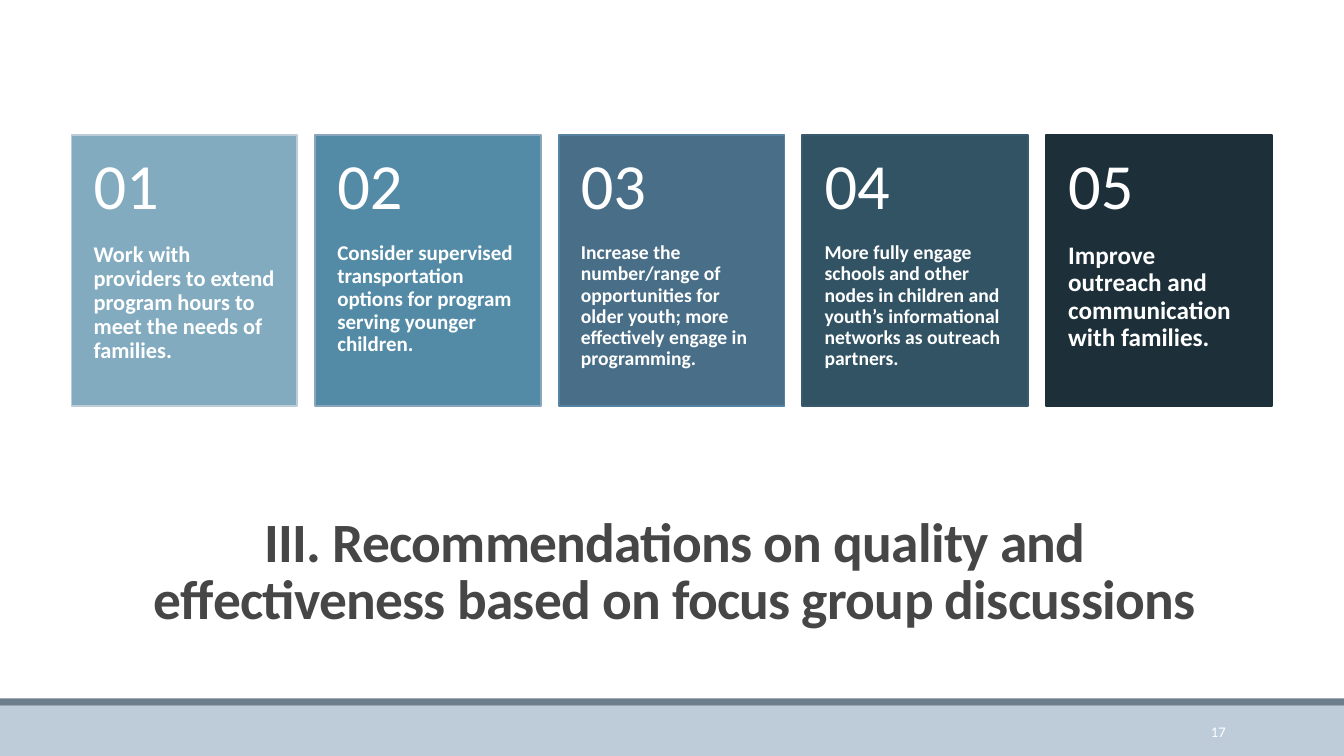
"""Build the slide of five numbered recommendation cards."""
from pptx import Presentation
from pptx.dml.color import RGBColor
from pptx.enum.shapes import MSO_SHAPE
from pptx.enum.text import MSO_ANCHOR, PP_ALIGN
from pptx.util import Cm, Pt

RECT = MSO_SHAPE.RECTANGLE
TOP, MIDDLE = MSO_ANCHOR.TOP, MSO_ANCHOR.MIDDLE
LEFT, CENTER, RIGHT = PP_ALIGN.LEFT, PP_ALIGN.CENTER, PP_ALIGN.RIGHT

WIDTH, HEIGHT = 33.87, 19.05
CARD_LEFT, CARD_TOP, CARD_STEP = 1.8, 3.4, 6.14
CARD_WIDTH, CARD_HEIGHT, NUMBER_HEIGHT = 5.69, 6.83, 2.72

CARDS = [
    ("Work with providers to extend program hours to meet the needs of families.",
     16, "82ABC0", "BECCDA"),
    ("Consider supervised transportation options for program serving younger children.",
     15, "538BA7", "8AA6BE"),
    ("Increase the number/range of opportunities for older youth; "
     "more effectively engage in programming.",
     14, "496E87", "5682A1"),
    ("More fully engage schools and other nodes in children and youth’s "
     "informational networks as outreach partners.",
     14, "325364", "395A6E"),
    ("Improve outreach and communication with families.",
     18, "1D303A", "1D303A"),
]


def rgb(value):
    return RGBColor.from_string(value)


def apply(target, values):
    for name, value in values.items():
        setattr(target, name, value)


class Deck:
    def __init__(self, prs, font="Calibri", color="FFFFFF"):
        self.s = prs.slides.add_slide(prs.slide_layouts[6])
        self.font, self.color = font, color

    def rect(self, x, y, w, h, fill, line=None):
        sp = self.s.shapes.add_shape(RECT, Cm(x), Cm(y), Cm(w), Cm(h))
        sp.shadow.inherit = False
        sp.fill.solid()
        sp.fill.fore_color.rgb = rgb(fill)
        if line:
            sp.line.color.rgb = rgb(line)
            sp.line.width = Pt(1.25)
        else:
            sp.line.fill.background()

    def text(self, x, y, w, h, text, size, bold=False, color=None, align=LEFT,
             anchor=MIDDLE, spacing=0.9, insets=(0.25, 0.13, 0.25, 0.13), tracking=0):
        tf = self.s.shapes.add_textbox(Cm(x), Cm(y), Cm(w), Cm(h)).text_frame
        sides = ("margin_left", "margin_top", "margin_right", "margin_bottom")
        apply(tf, {"word_wrap": True, "vertical_anchor": anchor,
                   **{side: Cm(inset) for side, inset in zip(sides, insets)}})
        p = tf.paragraphs[0]
        apply(p, {"alignment": align, "line_spacing": spacing})
        r = p.add_run()
        r.text = text
        apply(r.font, {"name": self.font, "size": Pt(size), "bold": bold})
        r.font.color.rgb = rgb(color or self.color)
        if tracking:
            r.font._element.set("spc", str(round(tracking * 100)))

    def card(self, x, number, text, size, fill, line):
        self.rect(x, CARD_TOP, CARD_WIDTH, CARD_HEIGHT, fill, line)
        self.text(x, CARD_TOP + NUMBER_HEIGHT, CARD_WIDTH, CARD_HEIGHT - NUMBER_HEIGHT,
                  text, size, bold=True, anchor=TOP, insets=(0.56, 0, 0.56, 0.91))
        self.text(x, CARD_TOP, CARD_WIDTH, NUMBER_HEIGHT, f"{number:02d}", 46,
                  insets=(0.56, 0.46, 0.56, 0.46))


def main():
    prs = Presentation()
    apply(prs, {"slide_width": Cm(WIDTH), "slide_height": Cm(HEIGHT)})
    deck = Deck(prs)
    deck.rect(0, 17.78, WIDTH, 1.27, "BECCDA")
    deck.rect(0, 17.6, WIDTH, 0.18, "6D7D8C")
    deck.text(2.87, 12.19, 28.27, 4.55,
              "III. Recommendations on quality and effectiveness "
              "based on focus group discussions",
              39.6, bold=True, color="464646", align=CENTER, spacing=0.85, tracking=-0.5)
    deck.text(27.51, 17.93, 3.63, 1.02, "17", 10.5, align=RIGHT, spacing=1.0)
    for i, card in enumerate(CARDS):
        deck.card(CARD_LEFT + i * CARD_STEP, i + 1, *card)
    prs.save("out.pptx")


if __name__ == "__main__":
    main()
